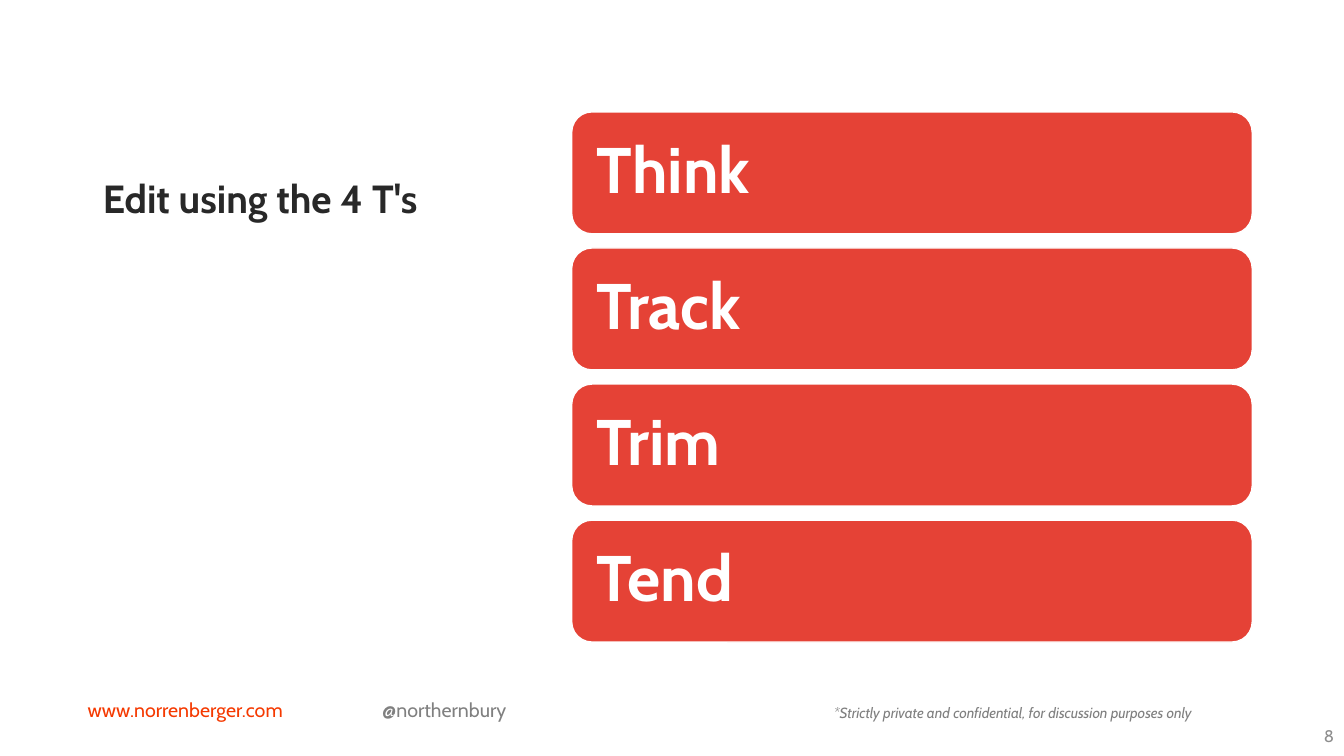
from pptx import Presentation
from pptx.dml.color import RGBColor
from pptx.enum.shapes import MSO_SHAPE
from pptx.enum.text import MSO_ANCHOR, PP_ALIGN
from pptx.util import Inches, Pt


def color(value):
    return RGBColor.from_string(value)


class SlideBuilder:
    font_name = "Cabin"
    accent = "E54236"
    white = "FFFFFF"

    def __init__(self, slide):
        self.slide = slide

    def set_text(self, shape, text, size, hex_color, bold=False, italic=False,
                 align=PP_ALIGN.LEFT, anchor=MSO_ANCHOR.TOP, inset=0.05):
        frame = shape.text_frame
        frame.word_wrap = True
        frame.vertical_anchor = anchor
        frame.margin_left = frame.margin_right = Inches(inset)
        frame.margin_top = frame.margin_bottom = Inches(0.05)
        frame.text = text
        paragraph = frame.paragraphs[0]
        paragraph.alignment = align
        paragraph.font.name = self.font_name
        paragraph.font.size = Pt(size)
        paragraph.font.bold = bold
        paragraph.font.italic = italic
        paragraph.font.color.rgb = color(hex_color)
        return paragraph

    def title(self, text, left, top, width, height):
        shape = self.slide.shapes.title
        shape.left, shape.top = Inches(left), Inches(top)
        shape.width, shape.height = Inches(width), Inches(height)
        paragraph = self.set_text(shape, text, 28, "282828", bold=True,
                                  anchor=MSO_ANCHOR.BOTTOM, inset=0.1)
        paragraph.line_spacing = 0.9

    def label(self, text, left, top, width, height, size, hex_color, **style):
        shape = self.slide.shapes.add_textbox(
            Inches(left), Inches(top), Inches(width), Inches(height))
        self.set_text(shape, text, size, hex_color, **style)
        shape.text_frame.word_wrap = False

    def card(self, text, left, top, width, height):
        shape = self.slide.shapes.add_shape(
            MSO_SHAPE.ROUNDED_RECTANGLE,
            Inches(left), Inches(top), Inches(width), Inches(height))
        shape.shadow.inherit = False
        shape.fill.solid()
        shape.fill.fore_color.rgb = color(self.accent)
        shape.line.color.rgb = color(self.white)
        shape.line.width = Pt(1)
        paragraph = self.set_text(shape, text, 46, self.white, bold=True,
                                  anchor=MSO_ANCHOR.MIDDLE, inset=0.19)
        paragraph.line_spacing = 0.9


def main():
    presentation = Presentation()
    presentation.slide_width = Inches(13.33)
    presentation.slide_height = Inches(7.5)
    slide = presentation.slides.add_slide(presentation.slide_layouts[5])
    builder = SlideBuilder(slide)

    builder.title("Edit using the 4 T's", 0.92, 1.08, 4.3, 1.17)
    for index, word in enumerate(["Think", "Track", "Trim", "Tend"]):
        builder.card(word, 5.67, 1.11 + 1.35 * index, 6.75, 1.21)

    builder.label("www.norrenberger.com", 0.82, 6.87, 2.21, 0.34, 14, "F53900")
    builder.label("@northernbury", 3.74, 6.87, 1.38, 0.34, 14, "808080")
    builder.label("*Strictly private and confidential, for discussion purposes only",
                  8.22, 6.93, 3.8, 0.34, 10.5, "7F7F7F", italic=True)
    builder.label("8", 12.85, 7.1, 0.48, 0.4, 12, "8E8E8E",
                  align=PP_ALIGN.RIGHT, anchor=MSO_ANCHOR.MIDDLE, inset=0.1)

    presentation.save("out.pptx")


if __name__ == "__main__":
    main()
